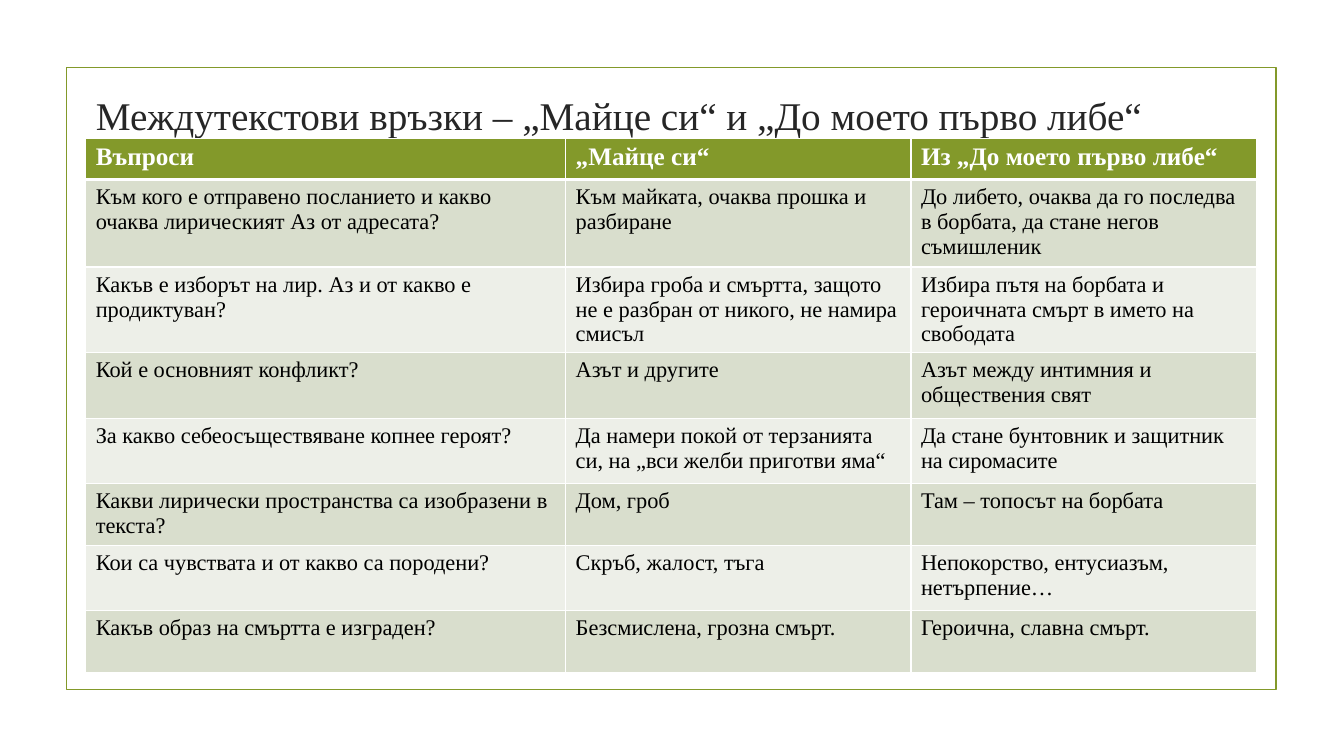
from dataclasses import dataclass

from lxml.etree import SubElement
from pptx import Presentation
from pptx.dml.color import RGBColor as Color
from pptx.enum.shapes import MSO_SHAPE as Preset
from pptx.enum.text import MSO_ANCHOR as Anchor, MSO_AUTO_SIZE as AutoSize, PP_ALIGN as Align
from pptx.oxml.ns import qn
from pptx.util import Inches, Pt


@dataclass(frozen=True)
class Theme:
    """Colours, typeface and type sizes of the slide."""
    face: str = "Times New Roman"
    green: str = "83992A"
    title_ink: str = "262626"
    ink: str = "000000"
    white: str = "FFFFFF"
    bands: tuple = ("D9DECD", "EDEFE8")
    title_size: int = 28
    header_size: int = 18
    cell_size: int = 16


THEME = Theme()
FRAME_BOX = (0.66, 0.67, 12, 6.17)
TITLE_BOX = (0.85, 0.69, 11.61, 0.89)
TABLE_BOX = (0.85, 1.37, 11.61, 5.3)
COLUMN_SHARES = (0.41, 0.295, 0.295)
ROW_HEIGHTS = (0.41, 0.87, 0.85, 0.65, 0.65, 0.61, 0.65, 0.61)
TITLE = "Междутекстови връзки – „Майце си“ и „До моето първо либе“"
ROWS = (
    ("Въпроси", "„Майце си“", "Из „До моето първо либе“"),
    ("Към кого е отправено посланието и какво очаква лирическият Аз от адресата?",
     "Към майката, очаква прошка и разбиране",
     "До либето, очаква да го последва в борбата, да стане негов съмишленик"),
    ("Какъв е изборът на лир. Аз и от какво е продиктуван?",
     "Избира гроба и смъртта, защото не е разбран от никого, не намира смисъл",
     "Избира пътя на борбата и героичната смърт в името на свободата"),
    ("Кой е основният конфликт?", "Азът и другите",
     "Азът между интимния и обществения свят"),
    ("За какво себеосъществяване копнее героят?",
     "Да намери покой от терзанията си, на „вси желби приготви яма“",
     "Да стане бунтовник и защитник на сиромасите"),
    ("Какви лирически пространства са изобразени в текста?", "Дом, гроб",
     "Там – топосът на борбата"),
    ("Кои са чувствата и от какво са породени?", "Скръб, жалост, тъга",
     "Непокорство, ентусиазъм, нетърпение…"),
    ("Какъв образ на смъртта е изграден?", "Безсмислена, грозна смърт.",
     "Героична, славна смърт."),
)


def set_values(target, values):
    """Set each attribute of the target from a dict."""
    for name, value in values.items():
        setattr(target, name, value)


def set_font(paragraph, size, color, bold=False):
    """Give a paragraph the theme face with a size, colour and weight."""
    set_values(paragraph.font, {"name": THEME.face, "size": Pt(size), "bold": bold})
    paragraph.font.color.rgb = Color.from_string(color)


def add_frame(slide, box):
    """Draw the green outline around the content."""
    frame = slide.shapes.add_shape(Preset.RECTANGLE, *map(Inches, box))
    frame.shadow.inherit = False
    frame.fill.background()
    frame.line.color.rgb = Color.from_string(THEME.green)
    frame.line.width = Pt(1.25)


def add_title(slide, box):
    """Place and format the title placeholder."""
    title = slide.shapes.title
    set_values(title, dict(zip(("left", "top", "width", "height"), map(Inches, box))))
    title.text_frame.text = TITLE
    set_values(title.text_frame, {"vertical_anchor": Anchor.MIDDLE, "word_wrap": True,
                                  "auto_size": AutoSize.NONE})
    paragraph = title.text_frame.paragraphs[0]
    paragraph.alignment = Align.JUSTIFY
    set_font(paragraph, THEME.title_size, THEME.title_ink)


def add_borders(cell, widths):
    """Rule the cell's sides in white, with widths in points by side."""
    properties = cell._tc.get_or_add_tcPr()
    for side, width in widths.items():
        line = SubElement(properties, qn(f"a:ln{side}"), w=str(Pt(width)))
        fill = SubElement(line, qn("a:solidFill"))
        SubElement(fill, qn("a:srgbClr"), val=THEME.white)


def format_cell(cell, text, row):
    """Fill one cell according to its row."""
    header = row == 0
    cell.text = text
    add_borders(cell, {"L": 1, "R": 1, "T": 3 if row == 1 else 1, "B": 3 if header else 1})
    cell.fill.solid()
    background = THEME.green if header else THEME.bands[(row - 1) % 2]
    cell.fill.fore_color.rgb = Color.from_string(background)
    size, color = ((THEME.header_size, THEME.white) if header
                   else (THEME.cell_size, THEME.ink))
    set_font(cell.text_frame.paragraphs[0], size, color, header)


def add_comparison(slide, box):
    """Build the table that compares the two poems."""
    table = slide.shapes.add_table(len(ROWS), len(COLUMN_SHARES), *map(Inches, box)).table
    for column, share in zip(table.columns, COLUMN_SHARES):
        column.width = Inches(box[2] * share)
    for index, (height, texts) in enumerate(zip(ROW_HEIGHTS, ROWS)):
        table.rows[index].height = Inches(height)
        for column, text in enumerate(texts):
            format_cell(table.cell(index, column), text, index)


def main():
    """Build and save the presentation."""
    presentation = Presentation()
    set_values(presentation, {"slide_width": Inches(13.33), "slide_height": Inches(7.5)})
    slide = presentation.slides.add_slide(presentation.slide_layouts[5])
    add_frame(slide, FRAME_BOX)
    add_title(slide, TITLE_BOX)
    add_comparison(slide, TABLE_BOX)
    presentation.save("out.pptx")


if __name__ == "__main__":
    main()
